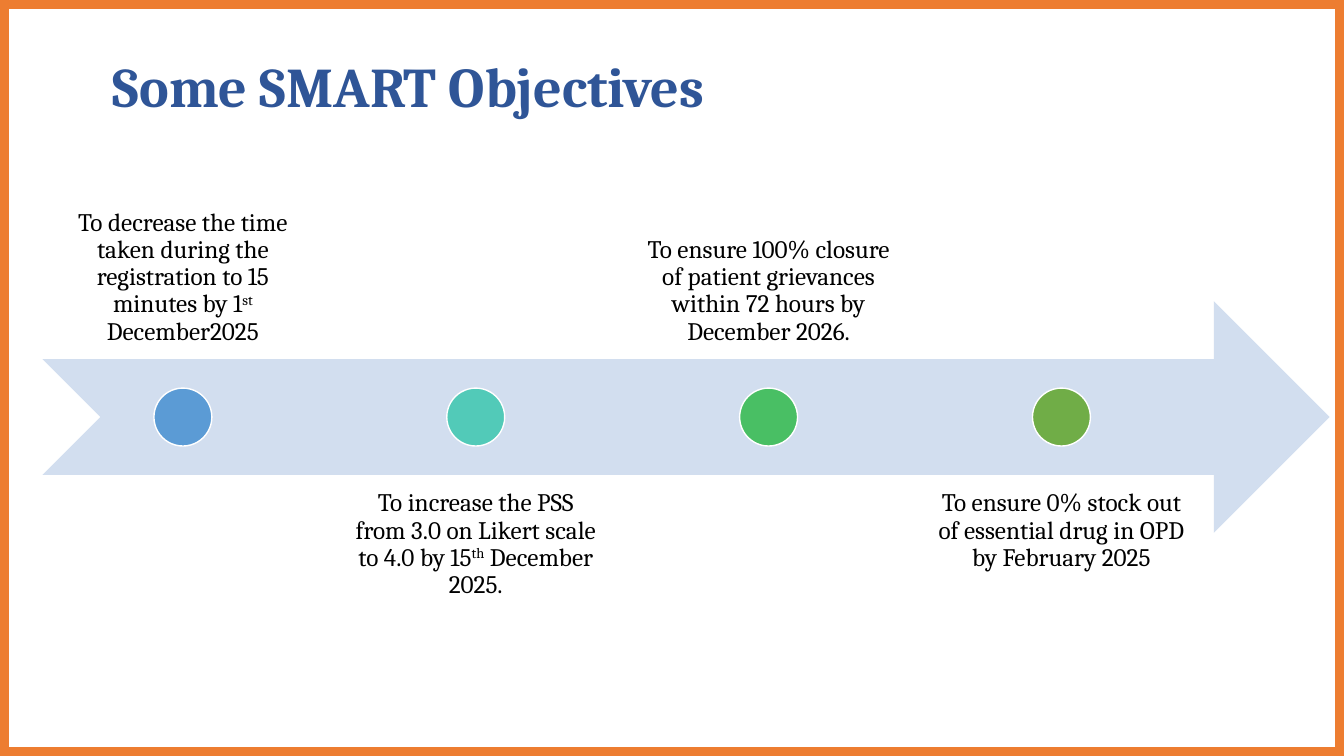
from pptx import Presentation
from pptx.dml.color import RGBColor
from pptx.enum.shapes import MSO_SHAPE
from pptx.enum.text import MSO_ANCHOR, MSO_AUTO_SIZE, PP_ALIGN
from pptx.util import Cm, Pt

COLORS = {
    "frame": "ED7D31", "title": "2F5597", "arrow": "D2DEEF",
    "text": "000000", "white": "FFFFFF",
}
WIDTH, HEIGHT = 33.87, 19.05
BORDER = 0.2

# Each goal: dot colour, then text pieces; every second piece is raised
GOALS = [
    ("5B9BD5", ["To decrease the time taken during the registration to 15 minutes by 1",
                "st", " December2025"]),
    ("52CAB8", ["To increase the PSS from 3.0 on Likert scale to 4.0 by 15",
                "th", " December 2025."]),
    ("49BF64", ["To ensure 100% closure of patient grievances within 72 hours "
                "by December 2026."]),
    ("70AD47", ["To ensure 0% stock out of essential drug in OPD by February 2025"]),
]


class Board:
    font = "Cambria"

    def __init__(self, slide):
        self.slide = slide

    def style(self, run, size, color, bold=False):
        run.font.name = self.font
        run.font.size = Pt(size)
        run.font.bold = bold
        run.font.color.rgb = RGBColor.from_string(color)

    def title(self, text, left, top, width, height):
        box = self.slide.shapes.title
        box.left, box.top, box.width, box.height = map(Cm, (left, top, width, height))
        frame = box.text_frame
        frame.text = text
        frame.auto_size = MSO_AUTO_SIZE.NONE
        frame.vertical_anchor = MSO_ANCHOR.MIDDLE
        frame.margin_left = Cm(2)
        para = frame.paragraphs[0]
        para.alignment = PP_ALIGN.LEFT
        para.line_spacing = 0.9
        self.style(para.runs[0], 40, COLORS["title"], True)

    def shape(self, kind, left, top, width, height, fill, line=None):
        item = self.slide.shapes.add_shape(kind, *map(Cm, (left, top, width, height)))
        item.shadow.inherit = False
        item.fill.solid()
        item.fill.fore_color.rgb = RGBColor.from_string(fill)
        if line:
            item.line.color.rgb = RGBColor.from_string(line)
            item.line.width = Pt(1)
        else:
            item.line.fill.background()
        return item

    def label(self, parts, left, top, width, height, anchor):
        box = self.slide.shapes.add_textbox(*map(Cm, (left, top, width, height)))
        frame = box.text_frame
        frame.word_wrap = True
        frame.vertical_anchor = anchor
        frame.margin_left = frame.margin_right = Cm(0.36)
        frame.margin_top = frame.margin_bottom = Cm(0.36)
        para = frame.paragraphs[0]
        para.alignment = PP_ALIGN.CENTER
        para.line_spacing = 0.9
        for i, part in enumerate(parts):
            run = para.add_run()
            run.text = part
            self.style(run, 18, COLORS["text"])
            if i % 2:
                run.font._element.set("baseline", "30000")


def main():
    deck = Presentation()
    deck.slide_width, deck.slide_height = Cm(WIDTH), Cm(HEIGHT)
    board = Board(deck.slides.add_slide(deck.slide_layouts[5]))

    # Border and title
    frame = board.shape(MSO_SHAPE.FRAME, 0, 0, WIDTH, HEIGHT,
                        COLORS["frame"], COLORS["frame"])
    frame.adjustments[0] = BORDER / HEIGHT
    board.title("Some SMART Objectives", 0.84, 1.3, 17.86, 1.88)

    # Timeline arrow
    top, height = 7.59, 5.84
    board.shape(MSO_SHAPE.NOTCHED_RIGHT_ARROW, 1.07, top, 32.44, height, COLORS["arrow"])

    # Goals: dots on the arrow, labels in turn above and below it
    start, step, width, dot = 1.09, 7.38, 7.04, 1.46
    for i, (color, parts) in enumerate(GOALS):
        left = start + i * step
        if i % 2:
            place, anchor = 11.99, MSO_ANCHOR.TOP
        else:
            place, anchor = 3.23, MSO_ANCHOR.BOTTOM
        board.label(parts, left, place, width, height, anchor)
        board.shape(MSO_SHAPE.OVAL, left + (width - dot) / 2, top + (height - dot) / 2,
                    dot, dot, color, COLORS["white"])

    deck.save("out.pptx")


if __name__ == "__main__":
    main()
